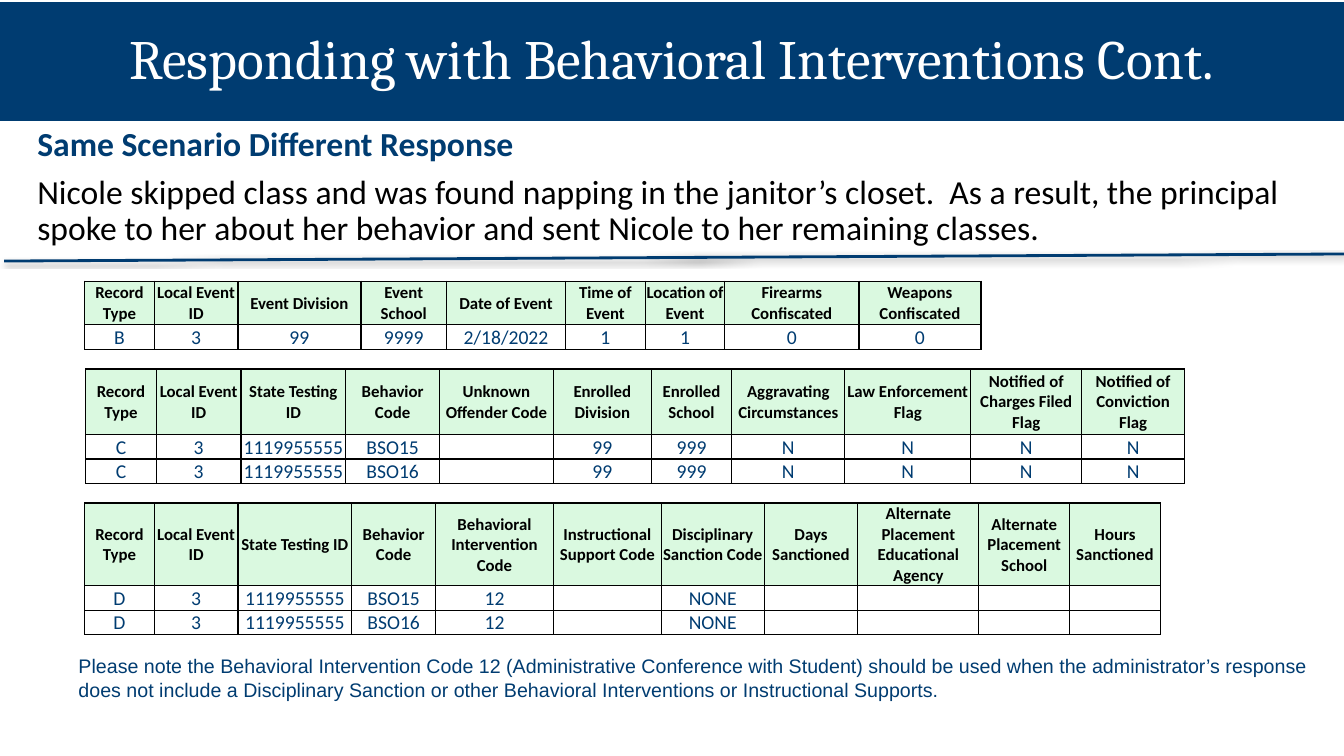
import pptx
import pptx.util
import pptx.dml.color
import pptx.enum.shapes
import pptx.enum.text
import pptx.oxml
import pptx.oxml.ns

Inches, Pt = pptx.util.Inches, pptx.util.Pt
ALIGN, ANCHOR = pptx.enum.text.PP_ALIGN, pptx.enum.text.MSO_ANCHOR
NAVY, BLACK, WHITE, MINT = "003C71", "000000", "FFFFFF", "DAF9E0"

# Content
TITLE = "Responding with Behavioral Interventions Cont."
HEADING = "Same Scenario Different Response"
SCENARIO = ("Nicole skipped class and was found napping in the janitor’s closet.  As a result, "
            "the principal spoke to her about her behavior and sent Nicole to her remaining classes.")
NOTE = ("Please note the Behavioral Intervention Code 12 (Administrative Conference with Student) "
        "should be used when the administrator’s response does not include a Disciplinary Sanction "
        "or other Behavioral Interventions or Instructional Supports.")

# Each table: left, top, header height, columns as (heading, width), records
TABLES = [
    (0.84, 2.79, 0.43,
     [("Record Type", 0.69), ("Local Event ID", 0.83), ("Event Division", 1.22),
      ("Event School", 0.85), ("Date of Event", 1.18), ("Time of Event", 0.79),
      ("Location of Event", 0.79), ("Firearms Confiscated", 1.33),
      ("Weapons Confiscated", 1.21)],
     [["B", "3", "99", "9999", "2/18/2022", "1", "1", "0", "0"]]),
    (0.85, 3.66, 0.65,
     [("Record Type", 0.7), ("Local Event ID", 0.84), ("State Testing ID", 1.04),
      ("Behavior Code", 0.93), ("Unknown Offender Code", 1.13), ("Enrolled Division", 0.97),
      ("Enrolled School", 0.8), ("Aggravating Circumstances", 1.12),
      ("Law Enforcement Flag", 1.25), ("Notified of Charges Filed Flag", 1.1),
      ("Notified of Conviction Flag", 1.02)],
     [["C", "3", "1119955555", code, "", "99", "999", "N", "N", "N", "N"]
      for code in ("BSO15", "BSO16")]),
    (0.84, 4.99, 0.82,
     [("Record Type", 0.69), ("Local Event ID", 0.83), ("State Testing ID", 1.13),
      ("Behavior Code", 0.83), ("Behavioral Intervention Code", 1.17),
      ("Instructional Support Code", 1.07), ("Disciplinary Sanction Code", 1.02),
      ("Days Sanctioned", 0.93), ("Alternate Placement Educational Agency", 1.2),
      ("Alternate Placement School", 0.9), ("Hours Sanctioned", 0.9)],
     [["D", "3", "1119955555", code, "12", "", "NONE", "", "", "", ""]
      for code in ("BSO15", "BSO16")]),
]
RECORD_HEIGHT = 0.24


def color(value):
    return pptx.dml.color.RGBColor.from_string(value)


def add_run(p, text, size, font, fill, bold=False):
    r = p.add_run()
    r.text = text
    r.font.size, r.font.name, r.font.bold = Pt(size), font, bold
    r.font.color.rgb = color(fill)


def add_xml(parent, xml):
    ns = pptx.oxml.ns.nsdecls("a")
    parent.append(pptx.oxml.parse_xml(xml.replace(" ", f" {ns} ", 1)))


def set_insets(target, left, top, right, bottom):
    target.margin_left, target.margin_top = Inches(left), Inches(top)
    target.margin_right, target.margin_bottom = Inches(right), Inches(bottom)


def add_text_box(s, left, top, width, height):
    tf = s.shapes.add_textbox(Inches(left), Inches(top), Inches(width), Inches(height)).text_frame
    tf.word_wrap = True
    return tf


def fill_cell(cell, text, header):
    set_insets(cell, 0.01, 0.01, 0.01, 0)
    cell.vertical_anchor = ANCHOR.MIDDLE
    # Borders come before the fill in the cell properties
    tc_pr = cell._tc.get_or_add_tcPr()
    for side in "LRTB":
        add_xml(tc_pr, f'<a:ln{side} w="12700"><a:solidFill><a:srgbClr val="{BLACK}"/>'
                       f'</a:solidFill></a:ln{side}>')
    if header:
        cell.fill.solid()
        cell.fill.fore_color.rgb = color(MINT)
    else:
        cell.fill.background()
    p = cell.text_frame.paragraphs[0]
    p.alignment = ALIGN.CENTER
    if header:
        add_run(p, text, 12, "Calibri", BLACK, True)
    elif text:
        add_run(p, text, 14, "Calibri", NAVY)
    else:
        # Keeps an empty cell from stretching its row
        add_xml(p._p, '<a:endParaRPr sz="1200"/>')


def add_record_table(s, left, top, header_height, columns, records):
    heights = [header_height] + [RECORD_HEIGHT] * len(records)
    widths = [width for _, width in columns]
    table = s.shapes.add_table(len(heights), len(widths), Inches(left), Inches(top),
                               Inches(sum(widths)), Inches(sum(heights))).table
    table.first_row = table.horz_banding = False
    for column, width in zip(table.columns, widths):
        column.width = Inches(width)
    rows = [[heading for heading, _ in columns]] + records
    for i, (row, height) in enumerate(zip(rows, heights)):
        table.rows[i].height = Inches(height)
        for j, text in enumerate(row):
            fill_cell(table.cell(i, j), text, i == 0)


def main():
    prs = pptx.Presentation()
    prs.slide_width, prs.slide_height = Inches(13.33), Inches(7.5)
    s = prs.slides.add_slide(prs.slide_layouts[6])

    # Title band
    sp = s.shapes.add_shape(pptx.enum.shapes.MSO_SHAPE.RECTANGLE,
                            0, Inches(0.02), Inches(13.33), Inches(1.18))
    sp.shadow.inherit = False
    sp.fill.solid()
    sp.fill.fore_color.rgb = color(NAVY)
    sp.line.fill.background()
    tf = sp.text_frame
    tf.word_wrap = True
    tf.vertical_anchor = ANCHOR.MIDDLE
    set_insets(tf, 0.13, 0.07, 0.13, 0.07)
    p = tf.paragraphs[0]
    p.alignment, p.line_spacing = ALIGN.CENTER, 0.9
    add_run(p, TITLE, 39.6, "Cambria", WHITE)

    # Scenario
    tf = add_text_box(s, 0.24, 1.19, 12.69, 1.3)
    set_insets(tf, 0.13, 0.07, 0.13, 0.07)
    p = tf.paragraphs[0]
    p.line_spacing = 0.9
    add_run(p, HEADING, 24, "Calibri", NAVY, True)
    p = tf.add_paragraph()
    p.line_spacing, p.space_before = 0.9, Pt(8.5)
    add_run(p, SCENARIO, 24, "Calibri", BLACK)

    # Divider with a soft shadow below
    divider = s.shapes.add_connector(pptx.enum.shapes.MSO_CONNECTOR.STRAIGHT, Inches(0.04),
                                     Inches(2.59), Inches(13.33), Inches(2.52))
    divider.line.color.rgb = color(NAVY)
    divider.line.width = Pt(2)
    add_xml(divider._element.spPr,
            '<a:effectLst ><a:outerShdw blurRad="39370" dist="20320" dir="5400000" '
            f'rotWithShape="0"><a:srgbClr val="{BLACK}"><a:alpha val="38000"/></a:srgbClr>'
            '</a:outerShdw></a:effectLst>')

    # Record tables
    for table in TABLES:
        add_record_table(s, *table)

    # Note
    tf = add_text_box(s, 0.68, 6.44, 12.41, 0.57)
    add_run(tf.paragraphs[0], NOTE, 14, "Arial", NAVY)

    prs.save("out.pptx")


if __name__ == "__main__":
    main()
